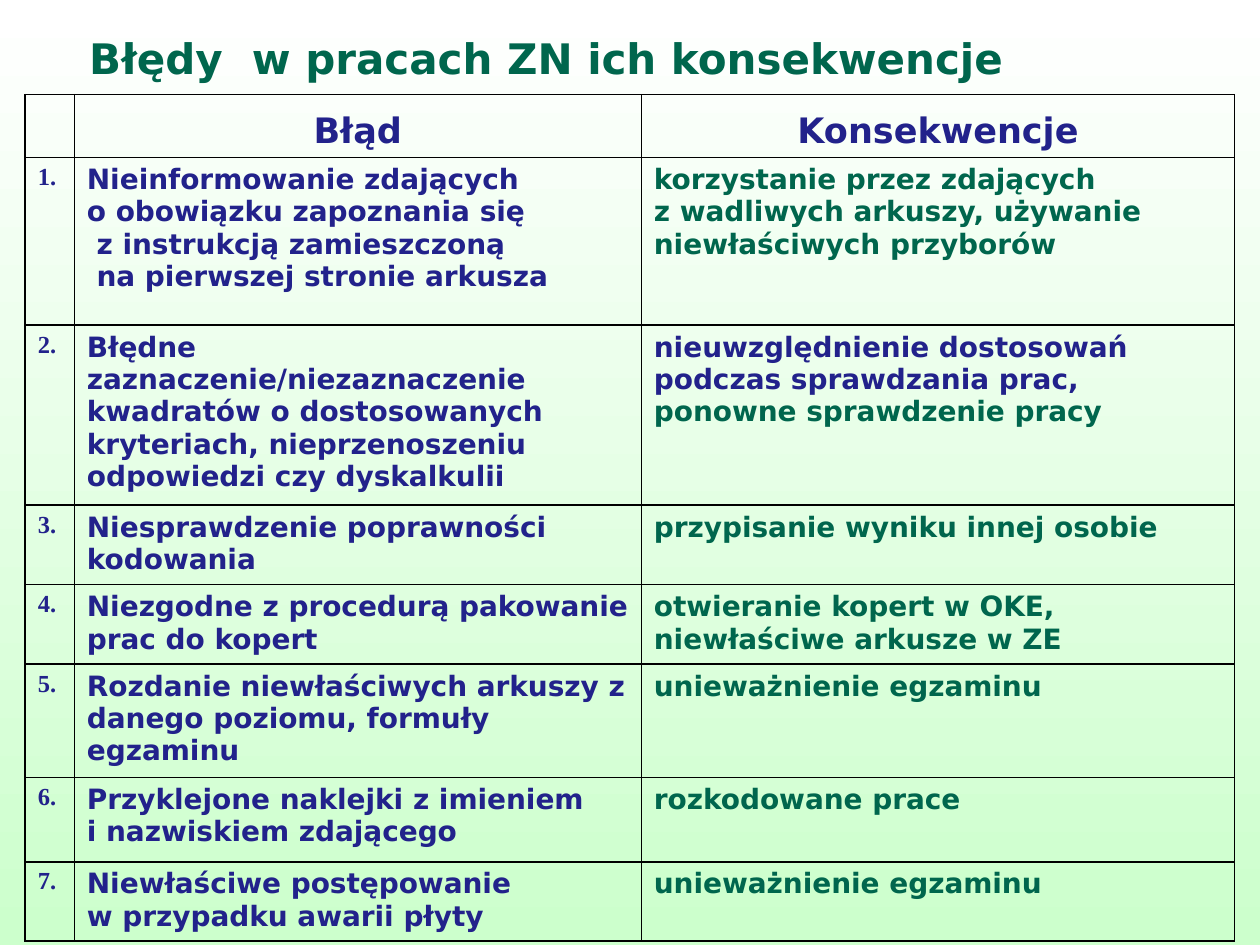
import copy

import lxml.etree
import pptx
import pptx.dml.color
import pptx.enum.text
import pptx.oxml.ns
import pptx.util

Inches = pptx.util.Inches
Align = pptx.enum.text.PP_ALIGN
Anchor = pptx.enum.text.MSO_ANCHOR

GREEN = "00664D"
NAVY = "22228B"
SANS = "DejaVu Sans"
SERIF = "Times New Roman"
NO_STYLE = "{2D5ABB26-0587-4C30-8999-92F81FD0307C}"

COLUMN_WIDTHS = [0.39, 4.5, 4.71]
ROW_HEIGHTS = [0.5, 1.33, 1.43, 0.63, 0.63, 0.9, 0.67, 0.63]
HEADINGS = ["Błąd", "Konsekwencje"]
MISTAKES = [
    ("Nieinformowanie zdających \no obowiązku zapoznania się\n z instrukcją zamieszczoną\n na pierwszej stronie arkusza",
     [("korzystanie przez zdających \nz wadliwych arkuszy, używanie niewłaściwych przyborów", GREEN)]),
    ("Błędne zaznaczenie/niezaznaczenie kwadratów o dostosowanych kryteriach, "
     "nieprzenoszeniu odpowiedzi czy dyskalkulii",
     [("nieuwzględnienie dostosowań podczas sprawdzania prac, ", NAVY),
      ("ponowne sprawdzenie pracy", GREEN)]),
    ("Niesprawdzenie poprawności kodowania",
     [("przypisanie wyniku innej osobie", GREEN)]),
    ("Niezgodne z procedurą pakowanie prac do kopert",
     [("otwieranie kopert w OKE, niewłaściwe arkusze w ZE", GREEN)]),
    ("Rozdanie niewłaściwych arkuszy z danego poziomu, formuły egzaminu",
     [("unieważnienie egzaminu", GREEN)]),
    ("Przyklejone naklejki z imieniem \ni nazwiskiem zdającego",
     [("rozkodowane prace", GREEN)]),
    ("Niewłaściwe postępowanie \nw przypadku awarii płyty",
     [("unieważnienie egzaminu", GREEN)]),
]


def color(value):
    """Return the RGB colour for a hex string."""
    return pptx.dml.color.RGBColor.from_string(value)


def format_run(run, size, hex_color, font_name=SANS):
    """Apply bold type of the given size, colour and font."""
    run.font.size = pptx.util.Pt(size)
    run.font.name = font_name
    run.font.bold = True
    run.font.color.rgb = color(hex_color)


def write_cell(cell, parts, size, font_name=SANS):
    """Write (text, colour) parts into the cell's single paragraph."""
    paragraph = cell.text_frame.paragraphs[0]
    paragraph.text = parts[0][0]
    for run in paragraph.runs:
        format_run(run, size, parts[0][1], font_name)
    for line_break in paragraph._p.findall(pptx.oxml.ns.qn("a:br")):
        line_break.append(copy.deepcopy(paragraph.runs[0]._r.rPr))
    for text, hex_color in parts[1:]:
        run = paragraph.add_run()
        run.text = text
        format_run(run, size, hex_color, font_name)


def style_cell(cell):
    """Give the cell thin black borders and no fill."""
    qn = pptx.oxml.ns.qn
    properties = cell._tc.get_or_add_tcPr()
    for side in ("a:lnL", "a:lnR", "a:lnT", "a:lnB"):
        line = lxml.etree.SubElement(properties, qn(side), w=str(pptx.util.Pt(1)))
        fill = lxml.etree.SubElement(line, qn("a:solidFill"))
        lxml.etree.SubElement(fill, qn("a:srgbClr"), val="000000")
    cell.fill.background()


def set_background(slide):
    """Fade the slide from white at the top to pale green."""
    fill = slide.background.fill
    fill.gradient()
    fill.gradient_angle = 270
    for stop, hex_color in zip(fill.gradient_stops, ("FFFFFF", "CCFFCC")):
        stop.color.rgb = color(hex_color)


def add_title(slide, text):
    """Place and format the title placeholder."""
    title = slide.shapes.title
    title.left, title.top = Inches(0), Inches(0.25)
    title.width, title.height = Inches(8.67), Inches(0.42)
    frame = title.text_frame
    frame.text = text
    frame.auto_size = pptx.enum.text.MSO_AUTO_SIZE.NONE
    frame.vertical_anchor = Anchor.MIDDLE
    frame.paragraphs[0].alignment = Align.CENTER
    format_run(frame.paragraphs[0].runs[0], 24, GREEN)


def add_mistakes_table(slide):
    """Add the numbered table of mistakes and consequences."""
    table = slide.shapes.add_table(
        len(ROW_HEIGHTS), len(COLUMN_WIDTHS), Inches(0.2), Inches(0.75),
        Inches(sum(COLUMN_WIDTHS)), Inches(sum(ROW_HEIGHTS))).table
    table.first_row = table.horz_banding = False
    table._tbl.tblPr.find(pptx.oxml.ns.qn("a:tableStyleId")).text = NO_STYLE
    for column, width in zip(table.columns, COLUMN_WIDTHS):
        column.width = Inches(width)
    for row, height in zip(table.rows, ROW_HEIGHTS):
        row.height = Inches(height)
    for cell in table.iter_cells():
        style_cell(cell)
    for index, heading in enumerate(HEADINGS, 1):
        cell = table.cell(0, index)
        write_cell(cell, [(heading, NAVY)], 20)
        cell.vertical_anchor = Anchor.BOTTOM
        cell.text_frame.paragraphs[0].alignment = Align.CENTER
    for number, (mistake, consequences) in enumerate(MISTAKES, 1):
        write_cell(table.cell(number, 0), [(f"{number}.", NAVY)], 14, SERIF)
        write_cell(table.cell(number, 1), [(mistake, NAVY)], 16)
        write_cell(table.cell(number, 2), consequences, 16)


def main():
    """Build and save the presentation."""
    presentation = pptx.Presentation()
    presentation.slide_width = Inches(10)
    presentation.slide_height = Inches(7.5)
    slide = presentation.slides.add_slide(presentation.slide_layouts[5])
    set_background(slide)
    add_title(slide, "Błędy  w pracach ZN ich konsekwencje")
    add_mistakes_table(slide)
    presentation.save("out.pptx")


if __name__ == "__main__":
    main()
